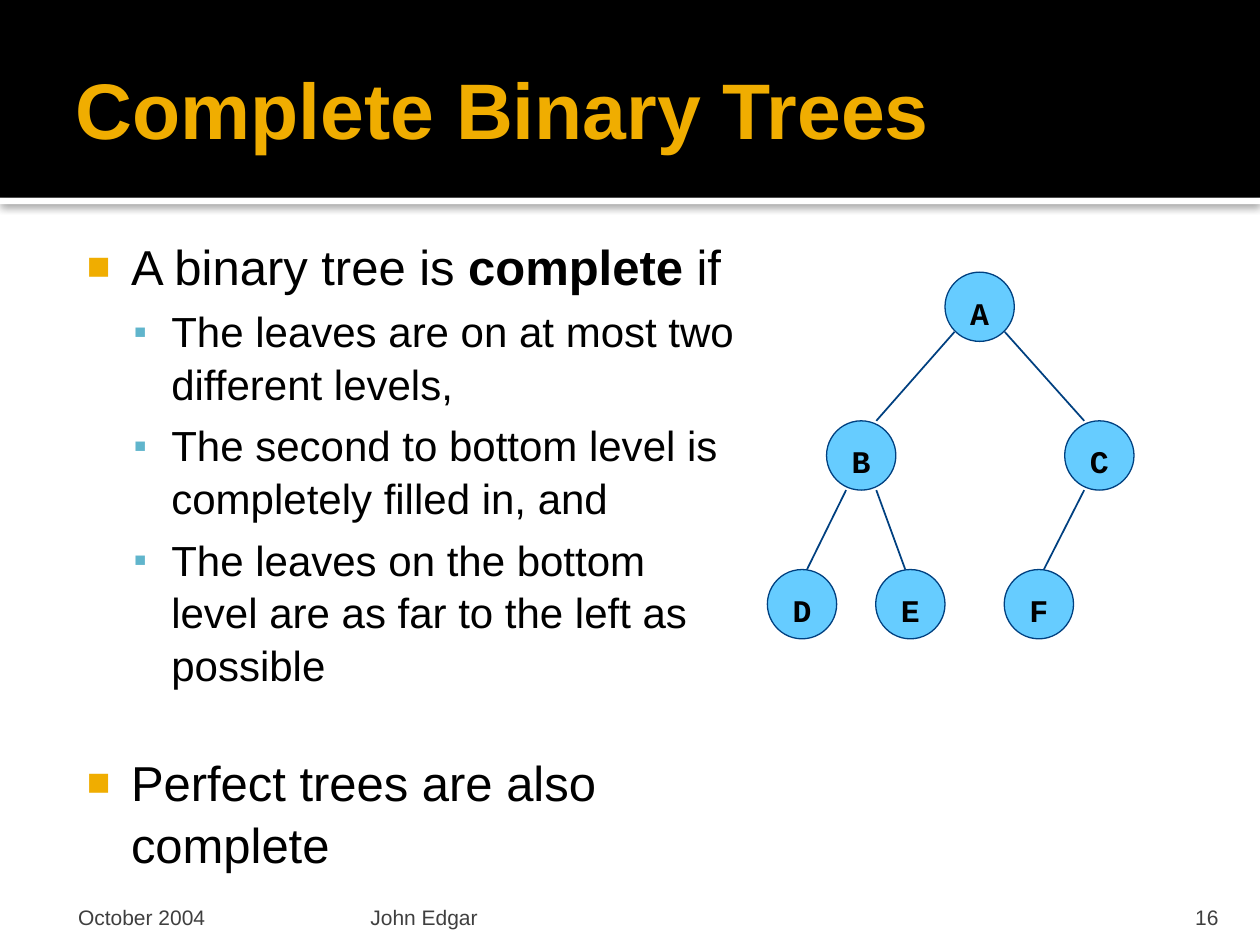
"""Builds a slide on complete binary trees with python-pptx."""
import pptx
import pptx.dml.color
import pptx.enum.shapes
import pptx.enum.text
import pptx.oxml
import pptx.oxml.ns
import pptx.util
from lxml import etree

Inches = pptx.util.Inches
Pt = pptx.util.Pt
Shape = pptx.enum.shapes.MSO_SHAPE
Anchor = pptx.enum.text.MSO_ANCHOR
Align = pptx.enum.text.PP_ALIGN
SHADOW = (
    f'<a:effectLst {pptx.oxml.ns.nsdecls("a")}>'
    '<a:outerShdw blurRad="63500" dist="10160" dir="5400000" rotWithShape="0">'
    '<a:srgbClr val="000000"><a:alpha val="60000"/></a:srgbClr>'
    '</a:outerShdw></a:effectLst>'
)


def color(code):
    return pptx.dml.color.RGBColor.from_string(code)


def write(para, text, size=12, font="Arial", ink="000000", bold=False, align=Align.LEFT):
    para.alignment = align
    run = para.add_run()
    run.text = text
    run.font.size = Pt(size)
    run.font.name = font
    run.font.bold = bold
    run.font.color.rgb = color(ink)


def place(item, left, top, width, height):
    item.left, item.top = Inches(left), Inches(top)
    item.width, item.height = Inches(width), Inches(height)


def setup(frame, insets, anchor):
    frame.word_wrap = True
    frame.auto_size = pptx.enum.text.MSO_AUTO_SIZE.NONE
    frame.vertical_anchor = anchor
    left, top, right, bottom = (Inches(inset) for inset in insets)
    frame.margin_left, frame.margin_top = left, top
    frame.margin_right, frame.margin_bottom = right, bottom
    return frame


def bullet(para, char, ink, scale, left, hang):
    props = para._p.get_or_add_pPr()
    props.set("marL", str(Inches(left)))
    props.set("indent", str(-Inches(hang)))
    tint = etree.SubElement(props, pptx.oxml.ns.qn("a:buClr"))
    etree.SubElement(tint, pptx.oxml.ns.qn("a:srgbClr"), val=ink)
    etree.SubElement(props, pptx.oxml.ns.qn("a:buSzPct"), val=str(scale * 1000))
    etree.SubElement(props, pptx.oxml.ns.qn("a:buFont"), typeface="Arial")
    etree.SubElement(props, pptx.oxml.ns.qn("a:buChar"), char=char)


class Deck:
    gold, teal, grey = "F0AD00", "60B5CC", "3F3F3F"
    sky, navy = "66CCFF", "004080"
    node_size = 0.55

    def __init__(self):
        self.file = pptx.Presentation()
        self.file.slide_width, self.file.slide_height = Inches(10), Inches(7.5)
        self.slide = self.file.slides.add_slide(self.file.slide_layouts[1])
        self.shapes = self.slide.shapes

    def shape(self, kind, box, fill, line=None):
        item = self.shapes.add_shape(kind, *(Inches(size) for size in box))
        item.shadow.inherit = False
        item.fill.solid()
        item.fill.fore_color.rgb = color(fill)
        if line:
            item.line.color.rgb = color(line)
            item.line.width = Pt(0.75)
        else:
            item.line.fill.background()
        return item

    def banner(self):
        edge = self.shape(Shape.RECTANGLE, (0, 1.57, 10, 0.05), "FFFFFF")
        edge.shadow.inherit = True
        edge.element.spPr.append(pptx.oxml.parse_xml(SHADOW))
        band = self.shape(Shape.RECTANGLE, (0, 0, 10, 1.57), "000000")
        for item in (band, edge):
            self.shapes.element.insert(2, item.element)

    def title(self, text):
        item = self.shapes.title
        place(item, 0.5, 0.17, 9, 1.37)
        frame = setup(item.text_frame, (0.1, 0.05, 0.05, 0.05), Anchor.MIDDLE)
        write(frame.paragraphs[0], text, size=45, ink=self.gold, bold=True)

    def body(self, items):
        item = self.slide.placeholders[1]
        place(item, 0.5, 1.75, 5.48, 4.97)
        frame = setup(item.text_frame, (0.06, 0.1, 0.1, 0.05), Anchor.TOP)
        for index, (level, gap, parts) in enumerate(items):
            para = frame.add_paragraph() if index else frame.paragraphs[0]
            para.level = level
            para.space_before = Pt(gap)
            para.line_spacing = 1.05
            for part, bold in parts:
                write(para, part, size=24 if level else 28, bold=bold)
            if level:
                bullet(para, "▪", self.teal, 90, 0.8, 0.3)
            else:
                bullet(para, "■", self.gold, 80, 0.48, 0.35)

    def footer(self, text, left, width, insets, align=Align.LEFT):
        item = self.shapes.add_textbox(Inches(left), Inches(7.08), Inches(width), Inches(0.3))
        frame = setup(item.text_frame, insets, Anchor.BOTTOM)
        write(frame.paragraphs[0], text, ink=self.grey, align=align)

    def node(self, name, left, top):
        box = (left, top, self.node_size, self.node_size)
        item = self.shape(Shape.OVAL, box, self.sky, self.navy)
        frame = setup(item.text_frame, (0, 0.09, 0, 0), Anchor.MIDDLE)
        write(frame.paragraphs[0], name, size=18, font="Courier New", bold=True,
              align=Align.CENTER)

    def edge(self, start, end, out, drop, into):
        half = self.node_size / 2
        side = 1 if end[0] > start[0] else -1
        ends = (start[0] + half + side * out, start[1] + half + drop,
                end[0] + half - side * into, end[1])
        line = self.shapes.add_connector(pptx.enum.shapes.MSO_CONNECTOR.STRAIGHT,
                                         *(Inches(value) for value in ends))
        line.line.color.rgb = color(self.navy)
        line.line.width = Pt(1)
        etree.SubElement(line.element.spPr, pptx.oxml.ns.qn("a:effectLst"))


def main():
    deck = Deck()
    deck.banner()
    deck.title("Complete Binary Trees")
    leaves = (
        "The leaves are on at most two different levels,",
        "The second to bottom level is completely filled in, and",
        "The leaves on the bottom level are as far to the left as possible",
    )
    deck.body([
        (0, 0, [("A binary tree is ", False), ("complete", True), (" if", False)]),
        *((1, 4.8, [(text, False)]) for text in leaves),
        (0, 34, [("Perfect trees are also complete", False)]),
    ])
    deck.footer("October 2004", 0.5, 2.33, (0.12, 0.05, 0.05, 0))
    deck.footer("John Edgar", 2.89, 6.02, (0.05, 0.05, 0.05, 0))
    deck.footer("16", 8.97, 0.8, (0.1, 0.05, 0.1, 0), Align.RIGHT)

    rows = (("A", 7.5),), (("B", 6.56), ("C", 8.45)), (("D", 6.09), ("E", 6.95), ("F", 7.97))
    spots = {name: (left, 2.16 + 1.18 * depth)
             for depth, row in enumerate(rows) for name, left in row}
    for name, spot in spots.items():
        deck.node(name, *spot)
    for top, low in ("AB", "AC", "BD", "BE", "CF"):
        reach = (0.2, 0.2, 0.12) if top == "A" else (0.12, deck.node_size / 2, 0.04)
        deck.edge(spots[top], spots[low], *reach)
    deck.file.save("out.pptx")


if __name__ == "__main__":
    main()
